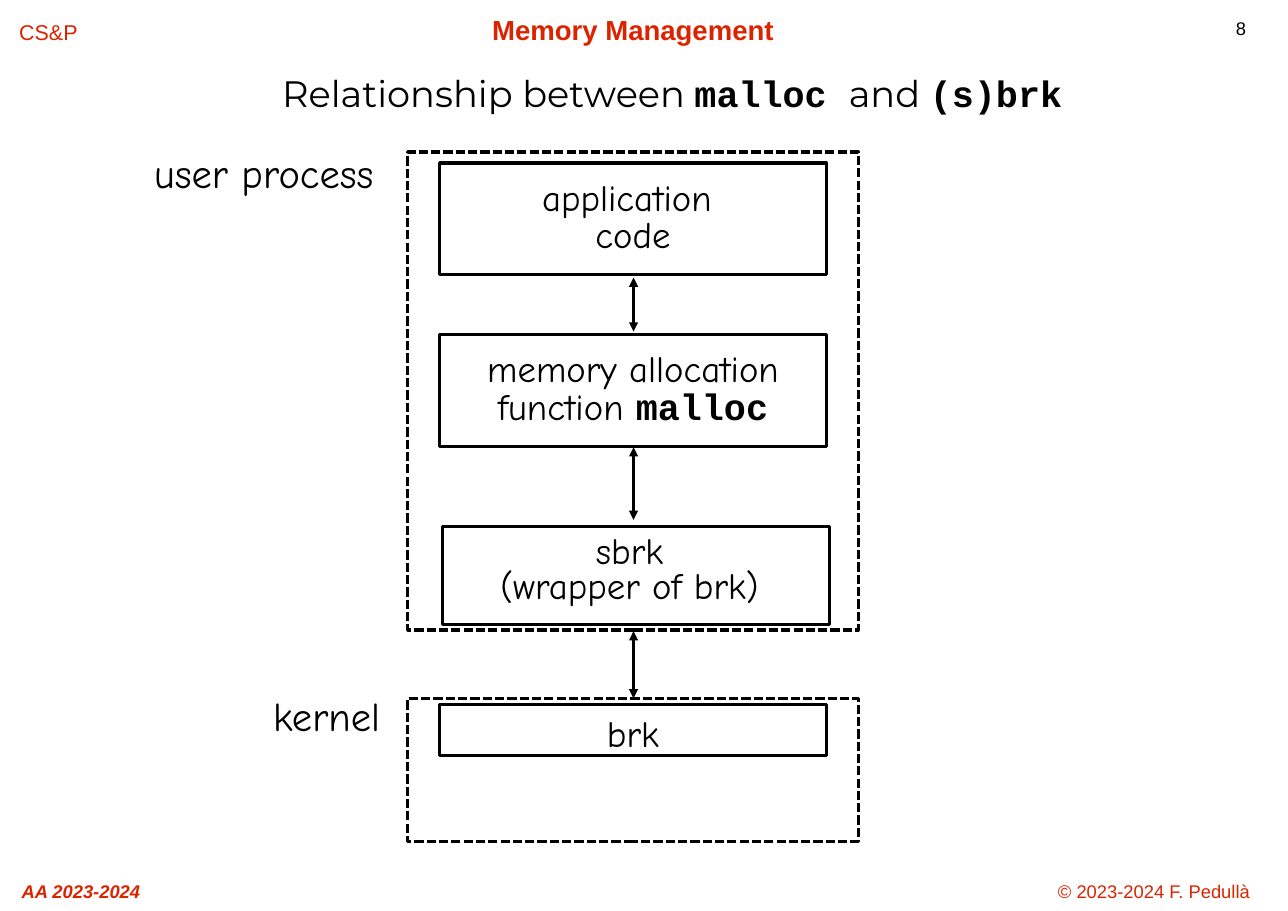
import pptx
import pptx.util
import pptx.dml.color
import pptx.enum.dml
import pptx.enum.shapes
import pptx.enum.text
import pptx.oxml
from dataclasses import dataclass

Inches = pptx.util.Inches
Pt = pptx.util.Pt
ALIGN = pptx.enum.text.PP_ALIGN
ANCHOR = pptx.enum.text.MSO_ANCHOR
DRAWING_NS = 'xmlns:a="http://schemas.openxmlformats.org/drawingml/2006/main"'


@dataclass
class Theme:
    ink: str = "000000"
    accent: str = "DC2300"
    plain: str = "Arial"
    heading: str = "Montserrat"
    hand: str = "Comic Neue"
    code: str = "Courier New"
    small: float = 12
    course: float = 14
    topic: float = 18
    body: float = 24
    label: float = 26.5
    stroke: float = 2


def add_text(paragraph, text, *, font, size, color, bold=False, italic=False):
    for index, line in enumerate(text.split("\n")):
        if index:
            paragraph.add_line_break()
        run = paragraph.add_run()
        run.text = line
        run.font.name = font
        run.font.size = Pt(size)
        run.font.bold = bold
        run.font.italic = italic
        run.font.color.rgb = pptx.dml.color.RGBColor.from_string(color)


class Diagram:
    def __init__(self, slide, theme):
        self.slide = slide
        self.theme = theme

    def fill_frame(self, frame, paragraphs, spacing, align=ALIGN.CENTER, **style):
        frame.word_wrap = True
        for index, pieces in enumerate(paragraphs):
            paragraph = frame.add_paragraph() if index else frame.paragraphs[0]
            paragraph.alignment = align
            paragraph.line_spacing = spacing
            for text, changes in pieces:
                add_text(paragraph, text, **{**style, **changes})

    def caption(self, bounds, pieces, spacing=1.01, anchor=ANCHOR.TOP, **style):
        box = self.slide.shapes.add_textbox(*map(Inches, bounds))
        box.text_frame.vertical_anchor = anchor
        self.fill_frame(box.text_frame, [pieces], spacing, **style)

    def outline(self, bounds, dashed=False):
        rect = self.slide.shapes.add_shape(
            pptx.enum.shapes.MSO_SHAPE.RECTANGLE, *map(Inches, bounds))
        rect.shadow.inherit = False
        rect.fill.background()
        self.stroke(rect.line)
        if dashed:
            rect.line.dash_style = pptx.enum.dml.MSO_LINE.SQUARE_DOT
        return rect

    def stage(self, bounds, paragraphs, spacing, right=0.1, bottom=0):
        frame = self.outline(bounds).text_frame
        frame.vertical_anchor = ANCHOR.MIDDLE
        frame.margin_top = 0
        frame.margin_right, frame.margin_bottom = Inches(right), Inches(bottom)
        self.fill_frame(frame, paragraphs, spacing, font=self.theme.hand,
                        size=self.theme.body, color=self.theme.ink)

    def double_arrow(self, x, top, bottom):
        arrow = self.slide.shapes.add_connector(
            pptx.enum.shapes.MSO_CONNECTOR.STRAIGHT,
            *map(Inches, (x, top, x, bottom)))
        self.stroke(arrow.line)
        line = arrow.line._get_or_add_ln()
        for end in ("headEnd", "tailEnd"):
            line.append(pptx.oxml.parse_xml(f'<a:{end} {DRAWING_NS} type="triangle"/>'))
        arrow._element.spPr.append(pptx.oxml.parse_xml(f"<a:effectLst {DRAWING_NS}/>"))

    def stroke(self, line):
        line.color.rgb = pptx.dml.color.RGBColor.from_string(self.theme.ink)
        line.width = Pt(self.theme.stroke)


def main():
    theme = Theme()
    deck = pptx.Presentation()
    deck.slide_width, deck.slide_height = Inches(11.69), Inches(8.27)
    diagram = Diagram(deck.slides.add_slide(deck.slide_layouts[6]), theme)
    code = {"font": theme.code, "bold": True}

    diagram.caption((11.12, 0.1, 0.96, 0.35), [("8", {})], align=ALIGN.LEFT,
                    font=theme.plain, size=theme.small, color=theme.ink)
    for bounds, text, style in (
        ((9.26, 7.94, 2.43, 0.33), "© 2023-2024 F. Pedullà", {"size": theme.small}),
        ((-0.45, 7.94, 2.37, 0.33), "AA 2023-2024",
         {"size": theme.small, "bold": True, "italic": True}),
        ((4.15, 0.07, 3.19, 0.33), "Memory Management",
         {"size": theme.topic, "bold": True}),
        ((0.06, 0.12, 0.76, 0.33), "CS&P", {"size": theme.course}),
    ):
        diagram.caption(bounds, [(text, {})], font=theme.plain,
                        color=theme.accent, **style)

    diagram.caption(
        (2.36, 0.56, 7.48, 0.63),
        [("Relationship between ", {}), ("malloc ", code), ("and ", {}), ("(s)brk", code)],
        spacing=0.85, anchor=ANCHOR.MIDDLE,
        font=theme.heading, size=theme.body, color=theme.ink)

    for bounds, label_bounds, label in (
        ((3.7, 1.38, 4.09, 4.34), (1.13, 1.36, 2.53, 0.66), "user process"),
        ((3.7, 6.34, 4.09, 1.3), (2.28, 6.29, 1.37, 0.66), "kernel"),
    ):
        diagram.outline(bounds, dashed=True)
        diagram.caption(label_bounds, [(label, {})], spacing=0.86,
                        font=theme.hand, size=theme.label, color=theme.ink)

    diagram.stage((3.99, 1.48, 3.51, 1.01), [[("application \ncode", {})]], 0.86)
    diagram.stage((3.99, 3.04, 3.51, 1.01),
                  [[("memory allocation", {})], [("function ", {}), ("malloc", code)]], 0.86)
    diagram.stage((4.02, 4.78, 3.51, 0.89),
                  [[("sbrk", {})], [("(wrapper of brk)", {})]], 0.8,
                  right=0.22, bottom=0.08)
    diagram.stage((3.99, 6.4, 3.51, 0.46), [[("brk", {})]], 1.12)

    for top, bottom in ((2.52, 3.01), (4.06, 4.72), (5.73, 6.34)):
        diagram.double_arrow(5.75, top, bottom)

    deck.save("out.pptx")


if __name__ == "__main__":
    main()
